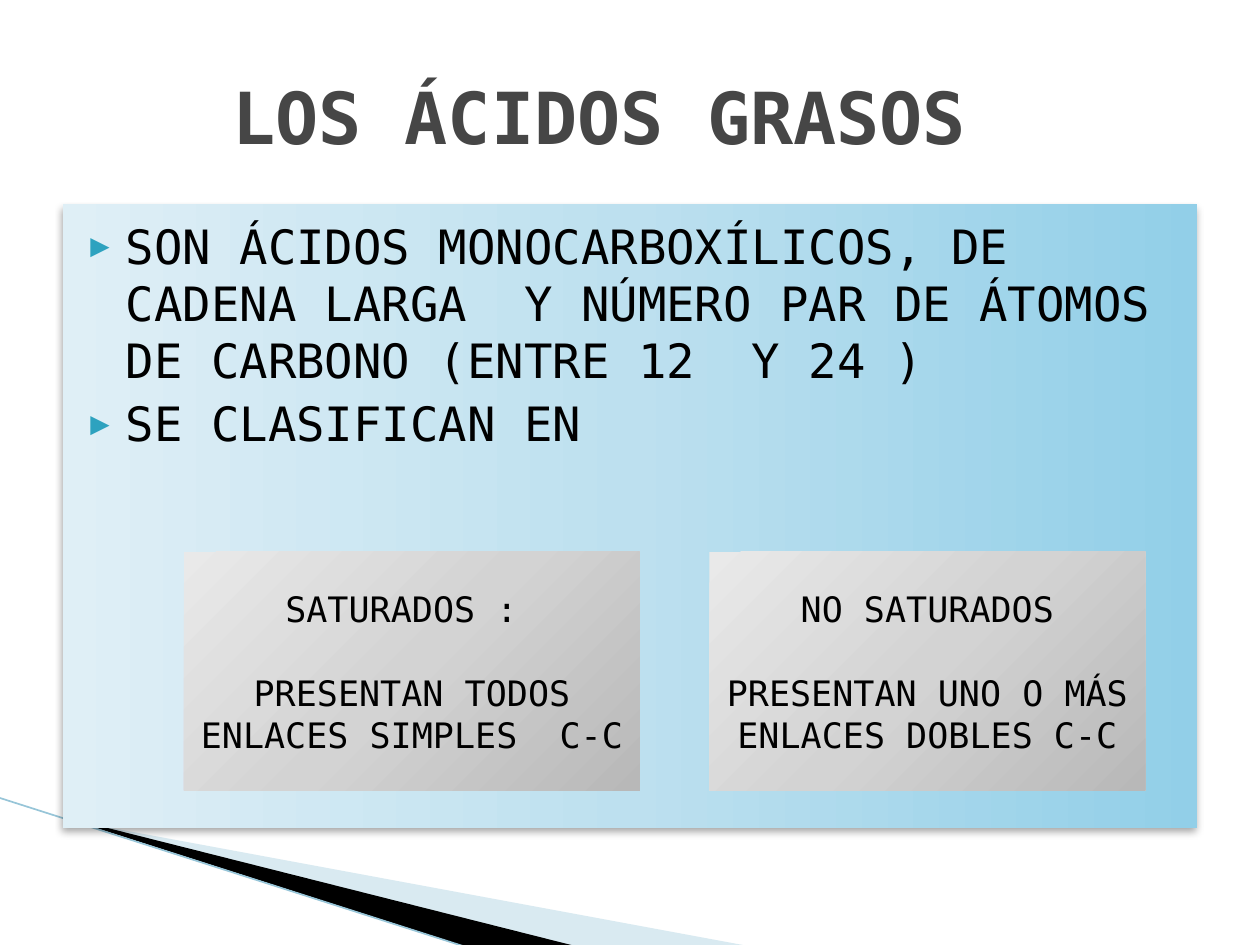
from dataclasses import dataclass

from lxml import etree
from pptx import Presentation
from pptx.dml.color import RGBColor
from pptx.enum.shapes import MSO_CONNECTOR, MSO_SHAPE
from pptx.enum.text import MSO_ANCHOR, PP_ALIGN
from pptx.oxml import parse_xml
from pptx.oxml.ns import nsdecls, qn
from pptx.util import Pt

RECT = MSO_SHAPE.RECTANGLE
STRAIGHT = MSO_CONNECTOR.STRAIGHT
MIDDLE, TOP = MSO_ANCHOR.MIDDLE, MSO_ANCHOR.TOP
CENTER, LEFT = PP_ALIGN.CENTER, PP_ALIGN.LEFT

FONT = "DejaVu Sans Mono"
BLACK = RGBColor(0x00, 0x00, 0x00)
GRAY = RGBColor(0x46, 0x46, 0x46)
TEAL = RGBColor(0x2D, 0xA2, 0xBF)
PALE = RGBColor(0xA0, 0xCB, 0xDC)
EDGE = RGBColor(0x97, 0xC5, 0xD8)
BLUES = [RGBColor(0x92, 0xCF, 0xE8), RGBColor(0xBD, 0xE0, 0xEF), RGBColor(0xDF, 0xEF, 0xF6)]
GRAYS = [RGBColor(0xB8, 0xB8, 0xB8), RGBColor(0xD3, 0xD3, 0xD3), RGBColor(0xE9, 0xE9, 0xE9)]
ACROSS = '<a:lin ang="10800000" scaled="0"/>'
CORNER = '<a:path path="circle"><a:fillToRect l="100000" t="100000"/></a:path>'


@dataclass
class Wedge:
    points: list[tuple[float, float]]
    color: RGBColor
    alpha: int


@dataclass
class Card:
    left: float
    width: float
    lines: list[str]


WEDGES = [
    Wedge([(39.6, 468.7), (428.4, 540.7), (328.3, 540.7), (39.6, 468)], PALE, 40),
    Wedge([(38.2, 467.3), (329, 540.7), (267.8, 541.4), (38.9, 468)], BLACK, 100),
]
CARDS = [
    Card(105.1, 260.6, ["SATURADOS : ", "PRESENTAN TODOS ENLACES SIMPLES  C-C"]),
    Card(405.4, 249.1, ["NO SATURADOS", "PRESENTAN UNO O MÁS ENLACES DOBLES C-C"]),
]
POINTS = [
    "SON ÁCIDOS MONOCARBOXÍLICOS, DE CADENA LARGA  Y NÚMERO PAR DE ÁTOMOS "
    "DE CARBONO (ENTRE 12  Y 24 )",
    "SE CLASIFICAN EN",
]


def draw_wedge(slide, wedge: Wedge) -> None:
    first, *rest = [(Pt(x), Pt(y)) for x, y in wedge.points]
    form = slide.shapes.build_freeform(*first)
    form.add_line_segments(rest)
    shape = form.convert_to_shape()
    shape.shadow.inherit = False
    shape.line.fill.background()
    shape.fill.solid()
    shape.fill.fore_color.rgb = wedge.color
    if wedge.alpha < 100:
        tint = shape.fill._xPr.find(".//" + qn("a:srgbClr"))
        etree.SubElement(tint, qn("a:alpha")).set("val", str(wedge.alpha * 1000))


def draw_edge(slide) -> None:
    edge = slide.shapes.add_connector(STRAIGHT, Pt(-0.7), Pt(455.8), Pt(267.1), Pt(541.4))
    edge.line.color.rgb = EDGE
    edge.line.width = Pt(0.95)
    etree.SubElement(edge._element.spPr, qn("a:effectLst"))


def add_panel(slide, left: float, top: float, width: float, height: float,
              colors: list[RGBColor], course: str):
    """Add a borderless rectangle with evenly spaced gradient stops."""
    panel = slide.shapes.add_shape(RECT, Pt(left), Pt(top), Pt(width), Pt(height))
    panel.shadow.inherit = False
    panel.line.fill.background()
    step = 100000 // (len(colors) - 1)
    stops = "".join(f'<a:gs pos="{i * step}"><a:srgbClr val="{color}"/></a:gs>'
                    for i, color in enumerate(colors))
    grad = parse_xml(f'<a:gradFill {nsdecls("a")} rotWithShape="1">'
                     f"<a:gsLst>{stops}</a:gsLst>{course}</a:gradFill>")
    panel._element.spPr.find(qn("a:prstGeom")).addnext(grad)
    return panel


def write(shape, lines: list[str], size: float, color: RGBColor, align, anchor,
          gap: float = 0, bold: bool = False) -> None:
    frame = shape.text_frame
    frame.word_wrap = True
    frame.vertical_anchor = anchor
    frame.text = "\n".join(lines)
    for i, para in enumerate(frame.paragraphs):
        para.alignment = align
        if i:
            para.space_before = Pt(gap)
        for run in para.runs:
            run.font.name = FONT
            run.font.size = Pt(size)
            run.font.bold = bold
            run.font.color.rgb = color


def add_bullet(para) -> None:
    props = para._p.get_or_add_pPr()
    props.set("marL", str(Pt(28.8)))
    props.set("indent", str(Pt(-20.2)))
    for xml in (f'<a:buClr {nsdecls("a")}><a:srgbClr val="{TEAL}"/></a:buClr>',
                f'<a:buSzPct {nsdecls("a")} val="68000"/>',
                f'<a:buFont {nsdecls("a")} typeface="{FONT}"/>',
                f'<a:buChar {nsdecls("a")} char="▶"/>'):
        props.append(parse_xml(xml))


def add_shadow(shape) -> None:
    effects = shape._element.spPr.find(qn("a:effectLst"))
    effects.append(parse_xml(
        f'<a:outerShdw {nsdecls("a")} blurRad="{Pt(4)}" dist="{Pt(3)}" dir="5400000" '
        'rotWithShape="0"><a:srgbClr val="000000"><a:alpha val="35000"/></a:srgbClr>'
        "</a:outerShdw>"))


def main() -> None:
    deck = Presentation()
    deck.slide_width, deck.slide_height = Pt(720), Pt(540)
    slide = deck.slides.add_slide(deck.slide_layouts[6])

    for wedge in WEDGES:
        draw_wedge(slide, wedge)
    draw_edge(slide)

    body = add_panel(slide, 36, 116.6, 648, 356.4, BLUES, ACROSS)
    add_shadow(body)
    write(body, POINTS, 27, BLACK, LEFT, TOP, gap=4)
    body.text_frame.margin_top = Pt(7.6)
    for para in body.text_frame.paragraphs:
        add_bullet(para)

    title = slide.shapes.add_textbox(Pt(31), Pt(20.9), Pt(648), Pt(90))
    write(title, ["LOS ÁCIDOS GRASOS "], 41, GRAY, CENTER, MIDDLE, bold=True)

    for card in CARDS:
        panel = add_panel(slide, card.left, 315.4, card.width, 136.1, GRAYS, CORNER)
        write(panel, card.lines, 20, BLACK, CENTER, MIDDLE, gap=24)

    deck.save("out.pptx")


if __name__ == "__main__":
    main()
